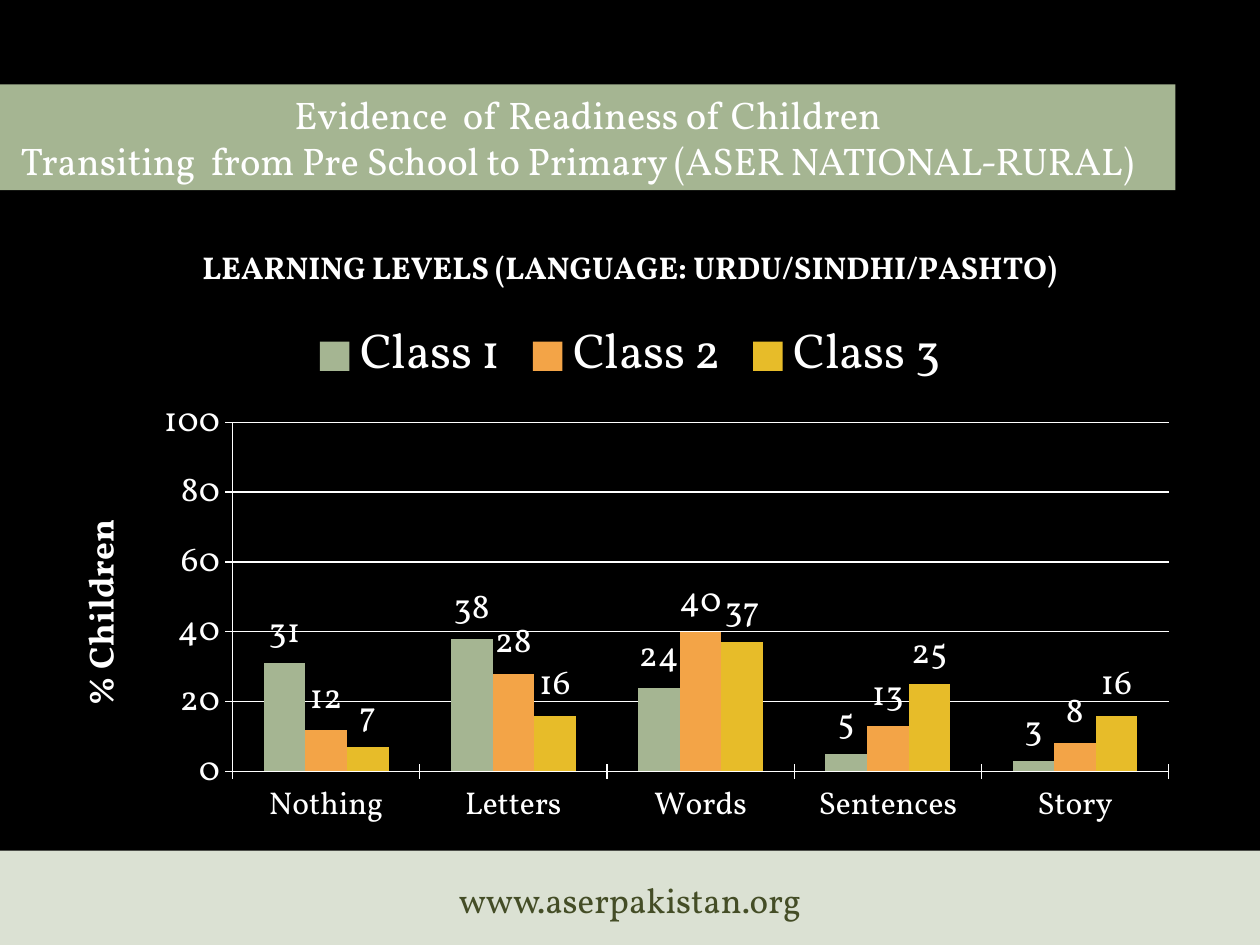
import pptx
import pptx.chart.data
import pptx.dml.color
import pptx.enum.chart
import pptx.enum.shapes
import pptx.enum.text
import pptx.oxml
import pptx.oxml.ns
import pptx.util
from pptx.util import Inches

RGBColor = pptx.dml.color.RGBColor
BLACK = RGBColor(0x00, 0x00, 0x00)
WHITE = RGBColor(0xFF, 0xFF, 0xFF)
SAGE = RGBColor(0xA5, 0xB5, 0x92)
PALE_SAGE = RGBColor(0xDB, 0xE1, 0xD3)
OLIVE = RGBColor(0x44, 0x4D, 0x26)
ORANGE = RGBColor(0xF3, 0xA4, 0x47)
GOLD = RGBColor(0xE7, 0xBC, 0x29)
FONT = "Vollkorn"

HEADING = [
    "Evidence  of Readiness of Children",
    "Transiting  from Pre School to Primary (ASER NATIONAL-RURAL)\t",
]
CATEGORIES = ["Nothing", "Letters", "Words", "Sentences", "Story"]
SERIES = [
    ("Class 1", [31, 38, 24, 5, 3], SAGE),
    ("Class 2", [12, 28, 40, 13, 8], ORANGE),
    ("Class 3", [7, 16, 37, 25, 16], GOLD),
]


def style_font(font, size, color=WHITE, bold=False):
    font.name = FONT
    font.size = pptx.util.Pt(size)
    font.color.rgb = color
    font.bold = bold


def add_bar(page, left, top, width, height, color):
    bar = page.shapes.add_shape(
        pptx.enum.shapes.MSO_SHAPE.RECTANGLE, left, top, width, height)
    bar.shadow.inherit = False
    bar.fill.solid()
    bar.fill.fore_color.rgb = color
    bar.line.fill.background()
    return bar


def write_lines(frame, lines, size, color):
    frame.word_wrap = True
    frame.vertical_anchor = pptx.enum.text.MSO_ANCHOR.MIDDLE
    for index, line in enumerate(lines):
        para = frame.paragraphs[0] if index == 0 else frame.add_paragraph()
        para.alignment = pptx.enum.text.PP_ALIGN.CENTER
        span = para.add_run()
        span.text = line
        style_font(span.font, size, color)


def add_footer(page, left, top, width, height):
    add_bar(page, left, top, width, height, PALE_SAGE)
    box_width, box_height = Inches(3.12), Inches(0.44)
    box = page.shapes.add_textbox(
        left + (width - box_width) // 2, top + Inches(0.17), box_width, box_height)
    write_lines(box.text_frame, ["www.aserpakistan.org"], 20, OLIVE)


def add_heading(page, left, top, width, height):
    banner = add_bar(page, left, top, width, height, SAGE)
    write_lines(banner.text_frame, HEADING, 22, WHITE)


def write_chart_title(titled, text, size):
    """Give a chart or an axis a bold title."""
    frame = (titled.chart_title if hasattr(titled, "chart_title")
             else titled.axis_title).text_frame
    span = frame.paragraphs[0].add_run()
    span.text = text
    style_font(span.font, size, bold=True)


def style_axis(axis, size):
    axis.major_tick_mark = pptx.enum.chart.XL_TICK_MARK.CROSS
    style_font(axis.tick_labels.font, size)
    axis.format.line.color.rgb = WHITE
    axis.format.line.width = pptx.util.Pt(0.75)


def place_plot(chart, x, y, width, height):
    """Fix the inner plot area, in fractions of the chart's size."""
    plot_area = chart._chartSpace.chart.plotArea
    for old in plot_area.findall(pptx.oxml.ns.qn("c:layout")):
        plot_area.remove(old)
    sizes = "".join(f'<c:{tag} val="{value}"/>' for tag, value in
                    zip("xywh", (x, y, width, height)))
    plot_area.insert(0, pptx.oxml.parse_xml(
        f'<c:layout {pptx.oxml.ns.nsdecls("c")}><c:manualLayout>'
        '<c:layoutTarget val="inner"/><c:xMode val="edge"/><c:yMode val="edge"/>'
        f'{sizes}</c:manualLayout></c:layout>'))


def add_learning_chart(page, left, top, width, height):
    data = pptx.chart.data.CategoryChartData(number_format="0")
    data.categories = CATEGORIES
    for name, values, _ in SERIES:
        data.add_series(name, values)
    chart = page.shapes.add_chart(
        pptx.enum.chart.XL_CHART_TYPE.COLUMN_CLUSTERED,
        left, top, width, height, data).chart
    style_font(chart.font, 10)
    write_chart_title(chart, "LEARNING LEVELS (LANGUAGE: URDU/SINDHI/PASHTO)", 18)

    chart.has_legend = True
    chart.legend.position = pptx.enum.chart.XL_LEGEND_POSITION.TOP
    chart.legend.include_in_layout = False
    style_font(chart.legend.font, 28)

    style_axis(chart.category_axis, 18)
    value_axis = chart.value_axis
    style_axis(value_axis, 20)
    write_chart_title(value_axis, "% Children", 20)
    value_axis.minimum_scale = 0
    value_axis.maximum_scale = 100
    value_axis.major_unit = 20
    value_axis.tick_labels.number_format = "0"
    value_axis.tick_labels.number_format_is_linked = False
    value_axis.major_gridlines.format.line.color.rgb = WHITE
    value_axis.major_gridlines.format.line.width = pptx.util.Pt(0.75)

    plot = chart.plots[0]
    plot.vary_by_categories = False
    plot.gap_width = 150
    plot.overlap = 0
    for series, (_, _, color) in zip(plot.series, SERIES):
        series.format.fill.solid()
        series.format.fill.fore_color.rgb = color
        labels = series.data_labels
        labels.show_value = True
        labels.number_format = "0"
        labels.number_format_is_linked = False
        labels.position = pptx.enum.chart.XL_LABEL_POSITION.OUTSIDE_END
        style_font(labels.font, 20)
    place_plot(chart, 0.168, 0.31, 0.782, 0.536)


def main():
    deck = pptx.Presentation()
    deck.slide_width, deck.slide_height = Inches(10), Inches(7.5)
    page = deck.slides.add_slide(deck.slide_layouts[6])
    page.background.fill.solid()
    page.background.fill.fore_color.rgb = BLACK
    add_footer(page, Inches(0), Inches(6.75), Inches(10), Inches(0.75))
    add_heading(page, Inches(0), Inches(0.67), Inches(9.33), Inches(0.84))
    add_learning_chart(page, Inches(0.25), Inches(1.75), Inches(9.5), Inches(5.17))
    deck.save("out.pptx")


if __name__ == "__main__":
    main()
